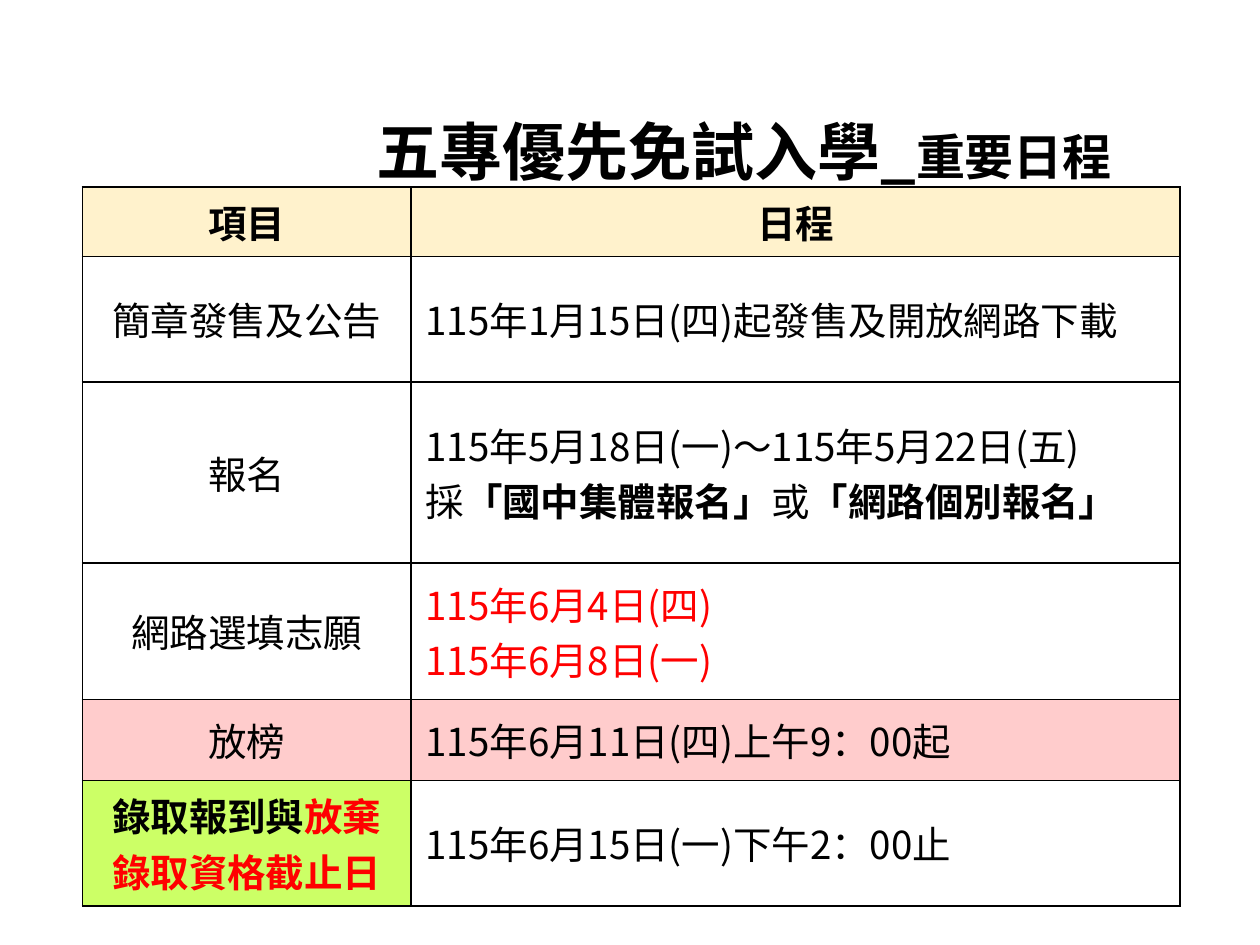
"""Builds the slide with the key dates for five-year college admission."""
import dataclasses

import lxml.etree
import pptx
import pptx.dml.color
import pptx.enum.text
import pptx.oxml.ns
import pptx.util

Cm = pptx.util.Cm
Pt = pptx.util.Pt
qn = pptx.oxml.ns.qn
Align = pptx.enum.text.PP_ALIGN
Anchor = pptx.enum.text.MSO_ANCHOR


@dataclasses.dataclass(frozen=True)
class Theme:
    font: str = "Noto Sans CJK TC"
    text: str = "000000"
    alert: str = "FF0000"
    border: str = "000000"
    header: str = "FFF2CC"
    result: str = "FFCCCC"
    deadline: str = "CCFF66"
    title_size: int = 36
    subtitle_size: int = 28
    table_size: int = 22
    border_width: int = 1


@dataclasses.dataclass(frozen=True)
class Span:
    text: str
    bold: bool = False
    color: str = Theme.text
    size: int = Theme.table_size


@dataclasses.dataclass(frozen=True)
class Entry:
    label: list
    dates: list
    label_fill: str = ""
    dates_fill: str = ""
    dates_align: Align = Align.LEFT


class ScheduleSlide:
    def __init__(self, presentation, theme):
        self.theme = theme
        self.slide = presentation.slides.add_slide(presentation.slide_layouts[5])

    def set_text(self, text_frame, paragraphs, align):
        text_frame.text = "\n" * (len(paragraphs) - 1)
        for paragraph, spans in zip(text_frame.paragraphs, paragraphs):
            paragraph.alignment = align
            for span in spans:
                run = paragraph.add_run()
                run.text = span.text
                run.font.name = self.theme.font
                run.font.size = Pt(span.size)
                run.font.bold = span.bold
                run.font.color.rgb = pptx.dml.color.RGBColor.from_string(span.color)
                properties = run.font._element
                lxml.etree.SubElement(properties, qn("a:ea"), typeface=self.theme.font)

    def add_title(self, spans, left, top, width, height):
        title = self.slide.shapes.title
        title.left, title.top, title.width, title.height = left, top, width, height
        title.text_frame.auto_size = pptx.enum.text.MSO_AUTO_SIZE.NONE
        title.text_frame.vertical_anchor = Anchor.MIDDLE
        self.set_text(title.text_frame, [spans], Align.CENTER)

    def add_borders(self, cell):
        properties = cell._tc.get_or_add_tcPr()
        width = str(Pt(self.theme.border_width))
        for side in ("a:lnL", "a:lnR", "a:lnT", "a:lnB"):
            line = lxml.etree.SubElement(properties, qn(side), w=width)
            fill = lxml.etree.SubElement(line, qn("a:solidFill"))
            lxml.etree.SubElement(fill, qn("a:srgbClr"), val=self.theme.border)

    def format_cell(self, cell, paragraphs, align, fill):
        self.set_text(cell.text_frame, paragraphs, align)
        cell.vertical_anchor = Anchor.MIDDLE
        cell.margin_left = cell.margin_right = Cm(0.29)
        cell.margin_top = cell.margin_bottom = Cm(0.14)
        self.add_borders(cell)
        if fill:
            cell.fill.solid()
            cell.fill.fore_color.rgb = pptx.dml.color.RGBColor.from_string(fill)
        else:
            cell.fill.background()

    def add_schedule(self, entries, left, top, widths, heights):
        frame = self.slide.shapes.add_table(
            len(entries), len(widths), left, top, sum(widths), sum(heights))
        table = frame.table
        for column, width in zip(table.columns, widths):
            column.width = width
        for row, height, entry in zip(table.rows, heights, entries):
            row.height = height
            label, dates = row.cells
            self.format_cell(label, entry.label, Align.CENTER, entry.label_fill)
            self.format_cell(dates, entry.dates, entry.dates_align, entry.dates_fill)


def main():
    theme = Theme()
    presentation = pptx.Presentation()
    presentation.slide_width, presentation.slide_height = Cm(25.4), Cm(19.05)
    schedule = ScheduleSlide(presentation, theme)
    schedule.add_title(
        [Span("五專優先免試入學_", True, size=theme.title_size),
         Span("重要日程", True, size=theme.subtitle_size)],
        Cm(4.52), Cm(1.93), Cm(20.96), Cm(2.21))
    entries = [
        Entry([[Span("項目", True)]], [[Span("日程", True)]],
              theme.header, theme.header, Align.CENTER),
        Entry([[Span("簡章發售及公告")]],
              [[Span("115年1月15日(四)起發售及開放網路下載")]]),
        Entry([[Span("報名")]],
              [[Span("115年5月18日(一)～115年5月22日(五)")],
               [Span("採"), Span("「國中集體報名」", True),
                Span("或"), Span("「網路個別報名」", True)]]),
        Entry([[Span("網路選填志願")]],
              [[Span("115年6月4日(四)", color=theme.alert)],
               [Span("115年6月8日(一)", color=theme.alert)]]),
        Entry([[Span("放榜")]], [[Span("115年6月11日(四)上午9：00起")]],
              theme.result, theme.result),
        Entry([[Span("錄取報到與", True),
                Span("放棄錄取資格截止日", True, theme.alert)]],
              [[Span("115年6月15日(一)下午2：00止")]], theme.deadline),
    ]
    widths = [Cm(6.63), Cm(15.5)]
    heights = [Cm(height) for height in (1.33, 2.11, 3.02, 2.76, 1.63, 2.11)]
    schedule.add_schedule(entries, Cm(1.66), Cm(3.77), widths, heights)
    presentation.save("out.pptx")


if __name__ == "__main__":
    main()
